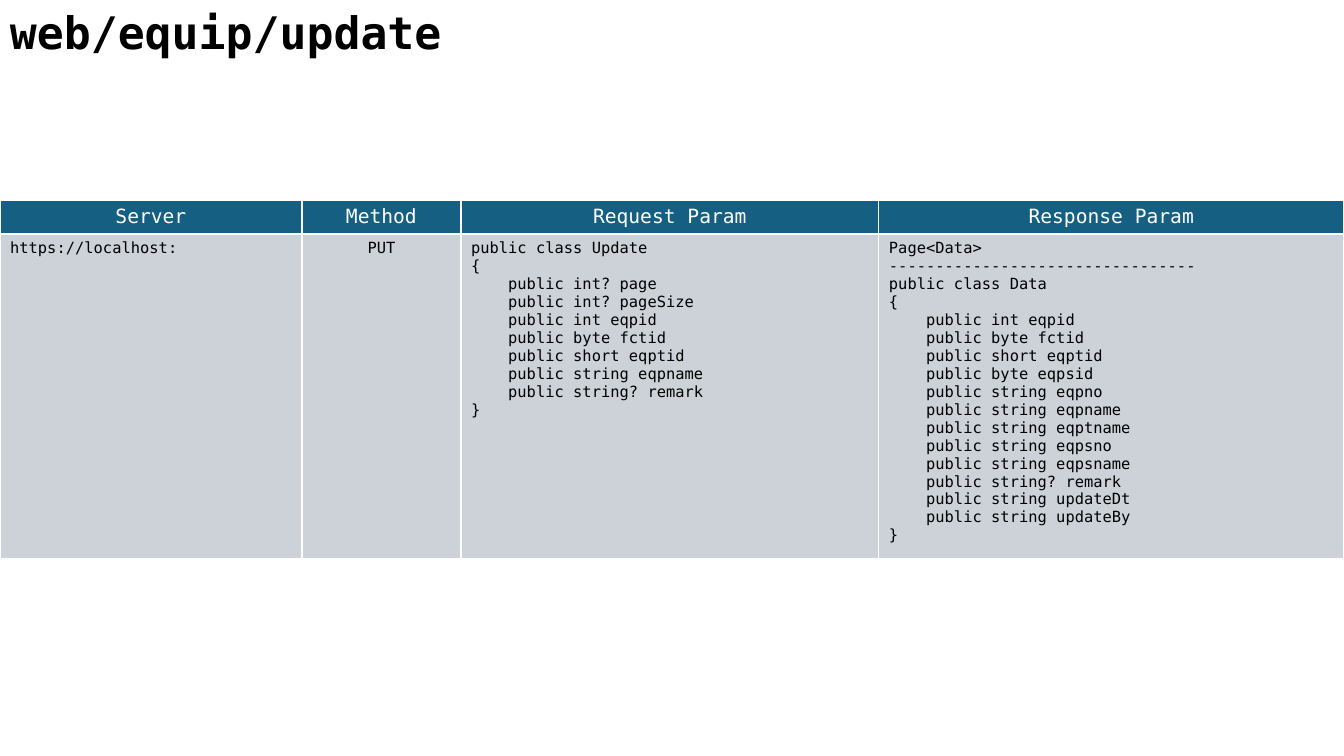
from lxml import etree
from pptx import Presentation
from pptx.dml.color import RGBColor
from pptx.enum.text import MSO_AUTO_SIZE, PP_ALIGN
from pptx.oxml.ns import qn
from pptx.util import Pt

LEFT = PP_ALIGN.LEFT
CENTER = PP_ALIGN.CENTER
GROW = MSO_AUTO_SIZE.SHAPE_TO_FIT_TEXT

SCALE = 914400 / 100.8
WIDTH, HEIGHT = 1344, 756

REQUEST = """public class Update
{
    public int? page
    public int? pageSize
    public int eqpid
    public byte fctid
    public short eqptid
    public string eqpname
    public string? remark
}"""

RESPONSE = """Page<Data>
---------------------------------
public class Data
{
    public int eqpid
    public byte fctid
    public short eqptid
    public byte eqpsid
    public string eqpno
    public string eqpname
    public string eqptname
    public string eqpsno
    public string eqpsname
    public string? remark
    public string updateDt
    public string updateBy
}"""

COLUMNS = [
    (302, "Server", "https://localhost:", LEFT),
    (159, "Method", "PUT", CENTER),
    (418, "Request Param", REQUEST, LEFT),
    (465, "Response Param", RESPONSE, LEFT),
]


def px(count):
    return round(count * SCALE)


def color(code):
    return RGBColor.from_string(code)


class Page:
    font = "DejaVu Sans Mono"
    black, white = "000000", "FFFFFF"
    head, body = "156082", "CCD2D8"

    def __init__(self, deck):
        self.slide = deck.slides.add_slide(deck.slide_layouts[6])

    def label(self, frame, text, size, ink, bold=False, align=LEFT):
        for index, line in enumerate(text.split("\n")):
            para = frame.add_paragraph() if index else frame.paragraphs[0]
            para.alignment = align
            run = para.add_run()
            run.text = line
            run.font.name = self.font
            run.font.size = Pt(size)
            run.font.bold = bold
            run.font.color.rgb = color(ink)

    def title(self, text, left, top, width, height):
        box = self.slide.shapes.add_textbox(px(left), px(top), px(width), px(height))
        box.text_frame.word_wrap = True
        box.text_frame.auto_size = GROW
        self.label(box.text_frame, text, 32, self.black, bold=True)

    def border(self, cell):
        props = cell._tc.get_or_add_tcPr()
        for side in ("lnL", "lnR", "lnT", "lnB"):
            line = etree.SubElement(props, qn(f"a:{side}"), w=str(Pt(1)))
            fill = etree.SubElement(line, qn("a:solidFill"))
            etree.SubElement(fill, qn("a:srgbClr"), val=self.white)

    def cell(self, cell, text, size, ink, fill, align):
        self.border(cell)
        cell.fill.solid()
        cell.fill.fore_color.rgb = color(fill)
        self.label(cell.text_frame, text, size, ink, align=align)

    def table(self, columns, left, top, heights):
        width = sum(column[0] for column in columns)
        grid = self.slide.shapes.add_table(
            len(heights), len(columns), px(left), px(top), px(width), px(sum(heights))
        ).table
        for row, height in zip(grid.rows, heights):
            row.height = px(height)
        for index, (wide, name, text, align) in enumerate(columns):
            grid.columns[index].width = px(wide)
            self.cell(grid.cell(0, index), name, 14, self.white, self.head, CENTER)
            self.cell(grid.cell(1, index), text, 11, self.black, self.body, align)


def main():
    deck = Presentation()
    deck.slide_width, deck.slide_height = px(WIDTH), px(HEIGHT)
    page = Page(deck)
    page.title("web/equip/update", 0, 0, 953, 65)
    page.table(COLUMNS, 0, 200, [34, 324])
    deck.save("out.pptx")


if __name__ == "__main__":
    main()
